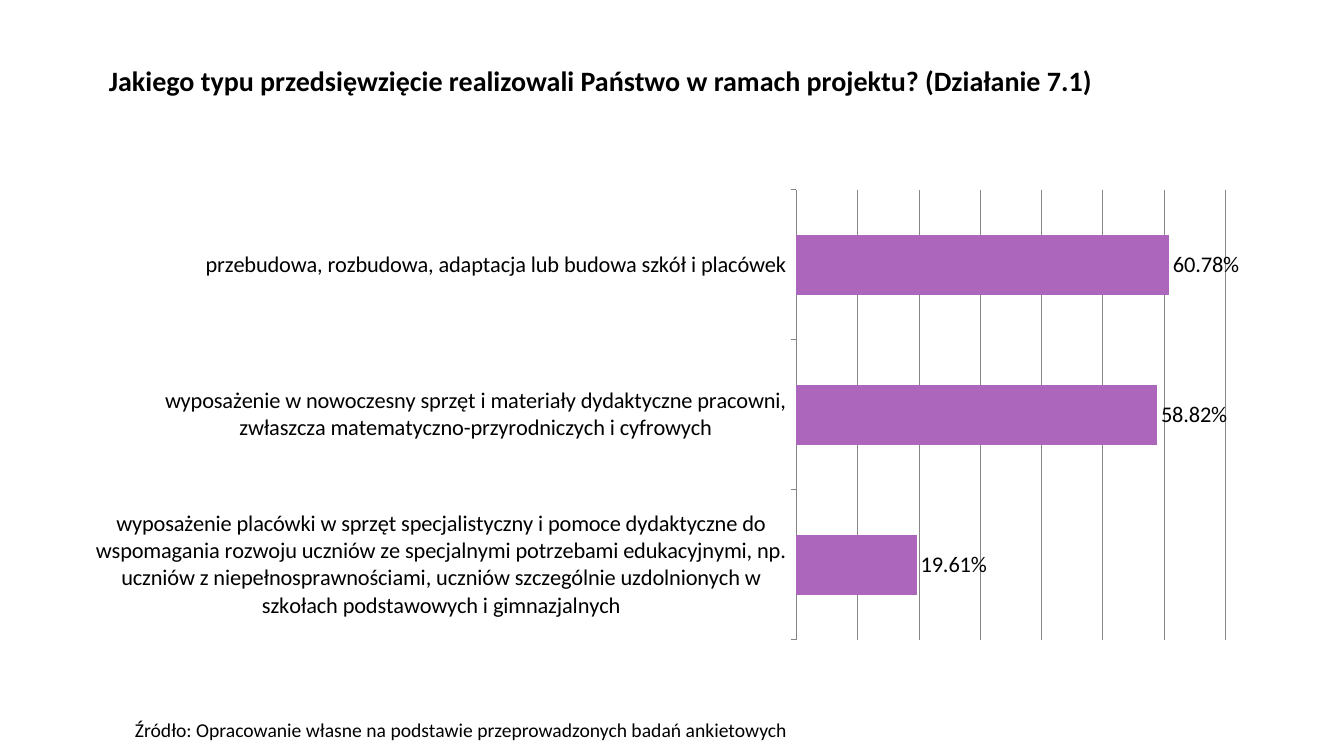
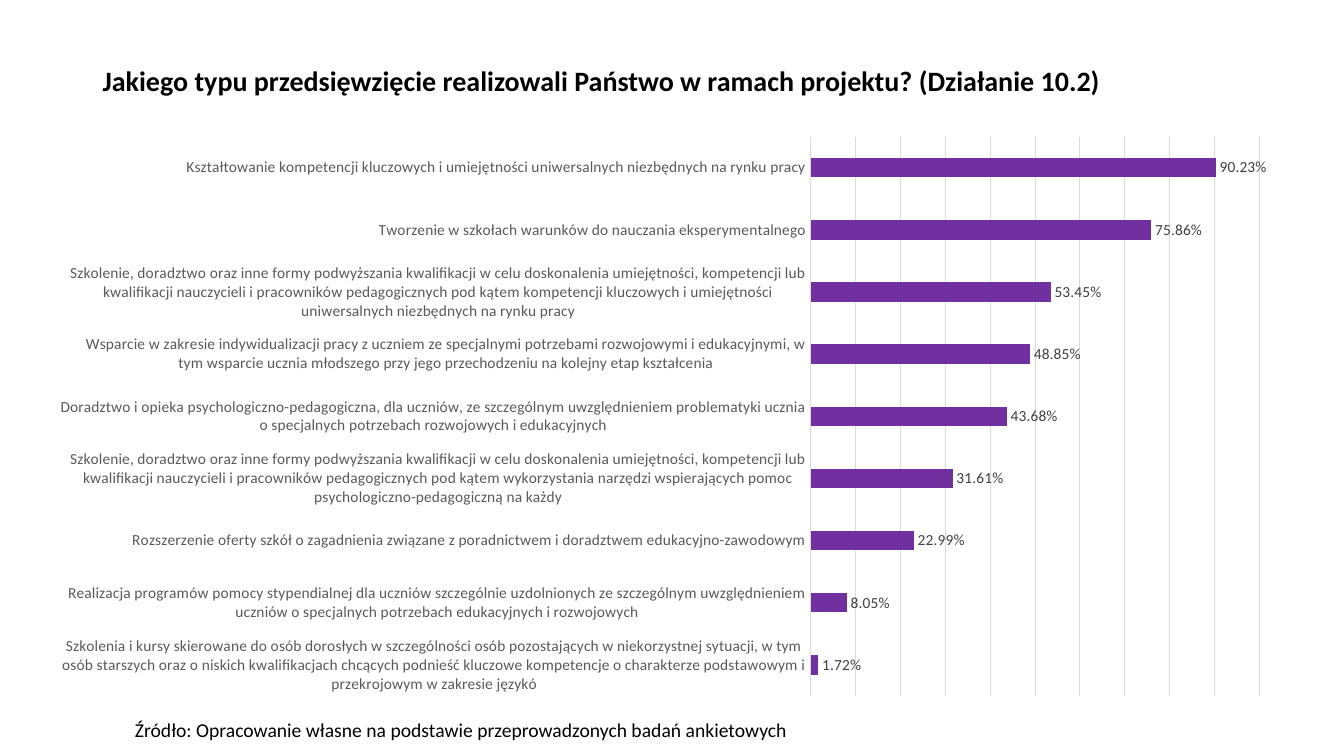
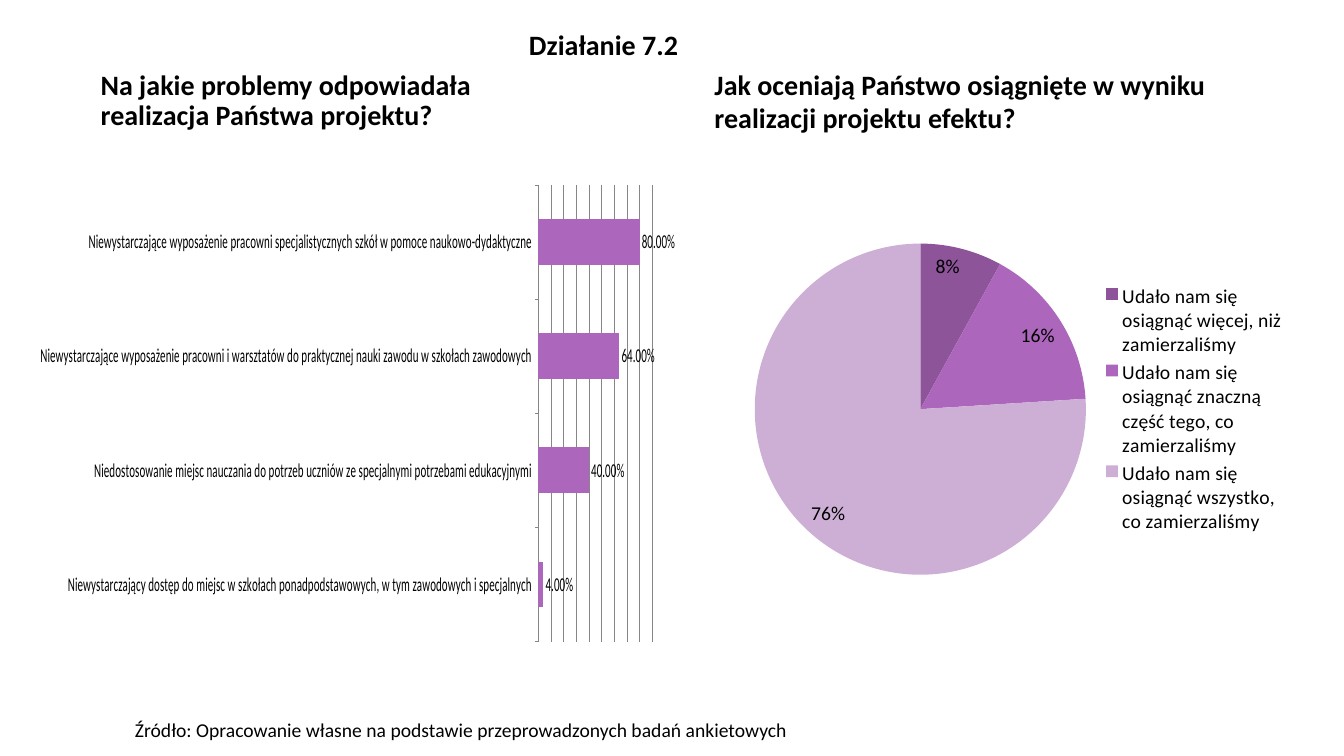
"""Build three survey-result slides with bar charts and a pie chart."""
import pptx
import pptx.chart.data
import pptx.dml.color
import pptx.enum.chart
import pptx.enum.text
import pptx.util

Pt = pptx.util.Pt
XL = pptx.enum.chart

COLORS = {
    "text": "000000",
    "label": "404040",
    "category": "595959",
    "axis": "868686",
    "pale": "D9D9D9",
    "bar": "AC66BB",
    "violet": "7030A0",
    "more": "8D5499",
    "most": "AC66BB",
    "all": "CDAFD6",
}
FONT = "Calibri"
SOURCE = "Źródło: Opracowanie własne na podstawie przeprowadzonych badań ankietowych"
QUESTION = "Jakiego typu przedsięwzięcie realizowali Państwo w ramach projektu? "

EQUIPMENT = [
    ("wyposażenie placówki w sprzęt specjalistyczny i pomoce dydaktyczne do wspomagania "
     "rozwoju uczniów ze specjalnymi potrzebami edukacyjnymi, np. uczniów z "
     "niepełnosprawnościami, uczniów szczególnie uzdolnionych w szkołach podstawowych "
     "i gimnazjalnych", 0.1961),
    ("wyposażenie w nowoczesny sprzęt i materiały dydaktyczne pracowni, zwłaszcza "
     "matematyczno-przyrodniczych i cyfrowych", 0.5882),
    ("przebudowa, rozbudowa, adaptacja lub budowa szkół i placówek", 0.6078),
]
TRAINING = ("Szkolenie, doradztwo oraz inne formy podwyższania kwalifikacji w celu doskonalenia "
            "umiejętności, kompetencji lub kwalifikacji nauczycieli i pracowników "
            "pedagogicznych pod kątem ")
COMPETENCES = [
    ("Szkolenia i kursy skierowane do osób dorosłych w szczególności osób pozostających w "
     "niekorzystnej sytuacji, w tym osób starszych oraz o niskich kwalifikacjach chcących "
     "podnieść kluczowe kompetencje o charakterze podstawowym i przekrojowym w zakresie "
     "językó", 0.0172),
    ("Realizacja programów pomocy stypendialnej dla uczniów szczególnie uzdolnionych ze "
     "szczególnym uwzględnieniem uczniów o specjalnych potrzebach edukacyjnych i "
     "rozwojowych", 0.0805),
    ("Rozszerzenie oferty szkół o zagadnienia związane z poradnictwem i doradztwem "
     "edukacyjno-zawodowym", 0.2299),
    (TRAINING + "wykorzystania narzędzi wspierających pomoc psychologiczno-pedagogiczną "
     "na każdy", 0.3161),
    ("Doradztwo i opieka psychologiczno-pedagogiczna, dla uczniów, ze szczególnym "
     "uwzględnieniem problematyki ucznia o specjalnych potrzebach rozwojowych i "
     "edukacyjnych", 0.4368),
    ("Wsparcie w zakresie indywidualizacji pracy z uczniem ze specjalnymi potrzebami "
     "rozwojowymi i edukacyjnymi, w tym wsparcie ucznia młodszego przy jego przechodzeniu "
     "na kolejny etap kształcenia", 0.4885),
    (TRAINING + "kompetencji kluczowych i umiejętności uniwersalnych niezbędnych na rynku "
     "pracy", 0.5345),
    ("Tworzenie w szkołach warunków do nauczania eksperymentalnego", 0.7586),
    ("Kształtowanie kompetencji kluczowych i umiejętności uniwersalnych niezbędnych na "
     "rynku pracy", 0.9023),
]
PROBLEMS = [
    ("Niewystarczający dostęp do miejsc w szkołach ponadpodstawowych, w tym zawodowych i "
     "specjalnych", 0.04),
    ("Niedostosowanie miejsc nauczania do potrzeb uczniów ze specjalnymi potrzebami "
     "edukacyjnymi", 0.4),
    ("Niewystarczające wyposażenie pracowni i warsztatów do praktycznej nauki zawodu w "
     "szkołach zawodowych", 0.64),
    ("Niewystarczające wyposażenie pracowni specjalistycznych szkół w pomoce "
     "naukowo-dydaktyczne", 0.8),
]
EFFECTS = [
    ("Udało nam się osiągnąć więcej, niż zamierzaliśmy", 8),
    ("Udało nam się osiągnąć znaczną część tego, co zamierzaliśmy", 16),
    ("Udało nam się osiągnąć wszystko, co zamierzaliśmy", 76),
]


def assign(target, **values):
    for key, value in values.items():
        setattr(target, key, value)


class Deck:
    def __init__(self):
        self.deck = pptx.Presentation()
        assign(self.deck, slide_width=Pt(960), slide_height=Pt(540))
        self.slide = None

    def new_slide(self):
        self.slide = self.deck.slides.add_slide(self.deck.slide_layouts[6])
        self.text(SOURCE, (89.3, 511.2, 828, 28.8), size=14)

    def style_font(self, font, size, color="text", bold=False):
        assign(font, name=FONT, size=Pt(size), bold=bold)
        self.paint(font.color, color)

    def paint(self, target, color):
        target.rgb = pptx.dml.color.RGBColor.from_string(COLORS[color])

    def fill(self, target, color):
        target.format.fill.solid()
        self.paint(target.format.fill.fore_color, color)

    def rule(self, line, color):
        self.paint(line.color, color)
        line.width = Pt(0.75)

    def text(self, words, box, size=20, bold=False, spacing=0.9, middle=False):
        frame = self.slide.shapes.add_textbox(*map(Pt, box)).text_frame
        anchors = pptx.enum.text.MSO_ANCHOR
        assign(frame, word_wrap=True,
               vertical_anchor=anchors.MIDDLE if middle else anchors.TOP)
        paragraph = frame.paragraphs[0]
        paragraph.line_spacing = spacing
        run = paragraph.add_run()
        run.text = words
        self.style_font(run.font, size, bold=bold)

    def title(self, words, box=(66.2, 28.8, 828, 60.5)):
        self.text(words, box, bold=True, middle=True)

    def heading(self, words, box):
        self.text(words, box, bold=True, spacing=1.0)

    def chart(self, kind, answers, box, size, number_format):
        data = pptx.chart.data.CategoryChartData()
        data.categories = [answer for answer, _ in answers]
        data.add_series("Series 1", [share for _, share in answers])
        chart = self.slide.shapes.add_chart(kind, *map(Pt, box), data).chart
        assign(chart, has_title=False, has_legend=False)
        self.style_font(chart.font, size)
        plot = chart.plots[0]
        plot.has_data_labels = True
        assign(plot.data_labels, number_format=number_format, number_format_is_linked=False)
        return chart, plot

    def bars(self, answers, box, size, top, color="bar", gap=150, grid="axis", axis="axis",
             tick=XL.XL_TICK_MARK.OUTSIDE, category=None, label="text"):
        chart, plot = self.chart(XL.XL_CHART_TYPE.BAR_CLUSTERED, answers, box, size, "0.00%")
        assign(plot, gap_width=gap, vary_by_categories=False)
        assign(plot.data_labels, show_value=True,
               position=XL.XL_LABEL_POSITION.OUTSIDE_END)
        self.style_font(plot.data_labels.font, size, label)
        self.fill(plot.series[0], color)
        assign(chart.value_axis, visible=False, has_major_gridlines=True,
               minimum_scale=0, maximum_scale=top, major_unit=0.1)
        self.rule(chart.value_axis.major_gridlines.format.line, grid)
        assign(chart.category_axis, major_tick_mark=tick,
               minor_tick_mark=XL.XL_TICK_MARK.NONE)
        self.rule(chart.category_axis.format.line, axis)
        if category:
            self.style_font(chart.category_axis.tick_labels.font, size, category)

    def pie(self, answers, box, size, colors):
        chart, plot = self.chart(XL.XL_CHART_TYPE.PIE, answers, box, size, "0%")
        plot.vary_by_categories = True
        assign(plot.data_labels, show_value=False, show_percentage=True,
               position=XL.XL_LABEL_POSITION.INSIDE_END)
        chart.has_legend = True
        assign(chart.legend, position=XL.XL_LEGEND_POSITION.RIGHT, include_in_layout=False)
        self.style_font(chart.legend.font, size)
        for index, color in enumerate(colors):
            self.fill(plot.series[0].points[index], color)


def main():
    survey = Deck()

    survey.new_slide()
    survey.title(QUESTION + "(Działanie 7.1)", (70.7, 28.8, 828, 60.5))
    survey.bars(EQUIPMENT, (64, 129, 828, 334.8), 16, 0.7, category="text")

    survey.new_slide()
    survey.title(QUESTION + "(Działanie 10.2)")
    survey.bars(COMPETENCES, (43.2, 89.3, 874, 416.2), 11, 1, color="violet", gap=219,
                grid="pale", axis="pale", tick=XL.XL_TICK_MARK.NONE,
                category="category", label="label")

    survey.new_slide()
    survey.title("Na jakie problemy odpowiadała realizacja Państwa projektu?",
                 (64.8, 20.2, 349.2, 104.4))
    survey.bars(PROBLEMS, (28.8, 125.3, 453.6, 339.8), 14, 0.9)
    survey.pie(EFFECTS, (529.2, 122.4, 396.7, 339.8), 14, ("more", "most", "all"))
    survey.heading("Jak oceniają Państwo osiągnięte w wyniku realizacji projektu efektu?",
                   (503.3, 44.6, 378.7, 55.4))
    survey.heading("Działanie 7.2", (370.8, 15.8, 480.2, 31.7))

    survey.deck.save("out.pptx")


if __name__ == "__main__":
    main()
